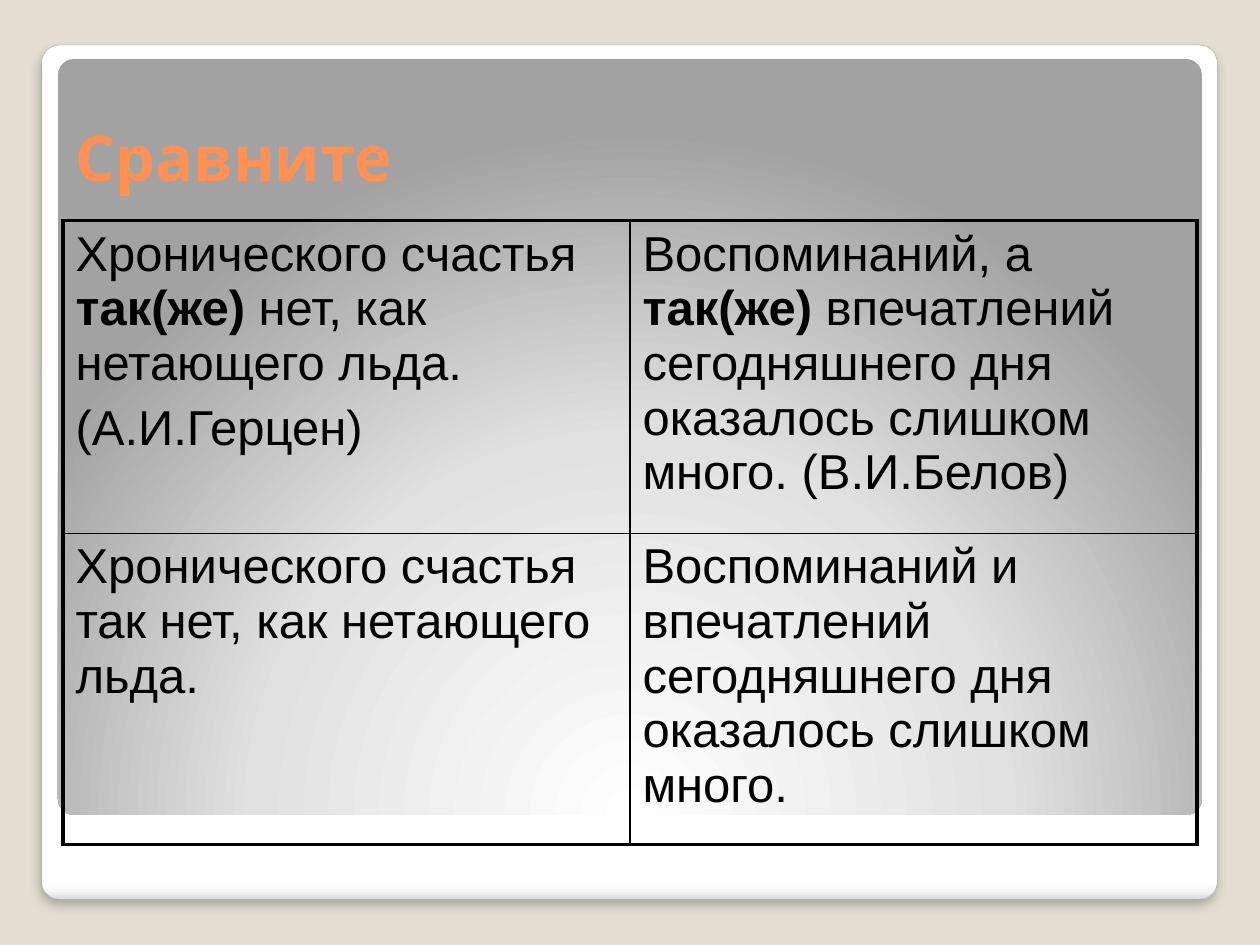
from lxml.etree import SubElement as Sub
from pptx import Presentation
from pptx.dml.color import RGBColor as RGB
from pptx.enum.shapes import MSO_SHAPE as Shape
from pptx.enum.text import MSO_ANCHOR as Anchor, PP_ALIGN as Align
from pptx.oxml.ns import qn
from pptx.util import Cm, Pt

HUES = {"back": "E3DED1", "edge": "A4A4A4", "title": "FF9155", "ink": "000000"}
CARD = [(0, "FFFFFF"), (98, "FFFFFF"), (99, "F7F7F7"), (100, "DADADA")]
GLOW = [(0, "FFFFFF"), (55, "E1E1E1"), (100, "A2A2A2")]


def panel(left, top, width, height, stops):
    """Add a rounded panel and return it with its emptied gradient element."""
    shape = slide.shapes.add_shape(Shape.ROUNDED_RECTANGLE, Cm(left), Cm(top), Cm(width), Cm(height))
    shape.adjustments[0] = 0.021
    shape.shadow.inherit = False
    shape.fill.gradient()
    grad = shape._element.spPr.find(qn("a:gradFill"))
    for part in list(grad):
        grad.remove(part)
    row = Sub(grad, qn("a:gsLst"))
    for pos, hue in stops:
        stop = Sub(row, qn("a:gs"), pos=str(pos * 1000))
        Sub(stop, qn("a:srgbClr"), val=hue)
    return shape, grad


def border(cell, side, width):
    line = Sub(cell._tc.get_or_add_tcPr(), qn("a:ln" + side), w=str(Pt(width)))
    Sub(Sub(line, qn("a:solidFill")), qn("a:srgbClr"), val=HUES["ink"])


deck = Presentation()
deck.slide_width, deck.slide_height = Cm(25.4), Cm(19.05)
slide = deck.slides.add_slide(deck.slide_layouts[5])
slide.background.fill.solid()
slide.background.fill.fore_color.rgb = RGB.from_string(HUES["back"])

# White card with a soft shadow
card, grad = panel(0.84, 0.91, 23.7, 17.22, CARD)
Sub(grad, qn("a:lin"), ang="5400000", scaled="0")
card.line.color.rgb = RGB.from_string(HUES["edge"])
card.line.width = Pt(0.16)
glow = Sub(card._element.spPr.find(qn("a:effectLst")), qn("a:outerShdw"),
           blurRad=str(Pt(6)), dist=str(Pt(4)), dir="5400000", rotWithShape="0")
Sub(Sub(glow, qn("a:srgbClr"), val=HUES["ink"]), qn("a:alpha"), val="25000")

# Grey panel lit from below
lit, grad = panel(1.17, 1.19, 23.06, 15.24, GLOW)
ring = Sub(grad, qn("a:path"), path="circle")
Sub(ring, qn("a:fillToRect"), l="50000", t="175000", r="50000", b="-75000")
lit.line.fill.background()

# Title, brought in front of the panels
title = slide.shapes.title
slide.shapes._spTree.append(title._element)
title.left, title.top, title.width, title.height = Cm(1.27), Cm(1.9), Cm(22.86), Cm(2.5)
title.text_frame.text = "Сравните"
title.text_frame.vertical_anchor = Anchor.MIDDLE
head = title.text_frame.paragraphs[0]
head.alignment = Align.LEFT
font = head.runs[0].font
font.name, font.size, font.bold = "Verdana", Pt(36), True
font.color.rgb = RGB.from_string(HUES["title"])

# Table: one string per paragraph, bold parts between asterisks
TEXTS = [
    [["Хронического счастья *так(же)* нет, как нетающего льда.", "(А.И.Герцен)"],
     ["Воспоминаний, а *так(же)* впечатлений сегодняшнего дня оказалось слишком много. (В.И.Белов)"]],
    [["Хронического счастья так нет, как нетающего льда."],
     ["Воспоминаний и впечатлений сегодняшнего дня оказалось слишком много."]],
]
table = slide.shapes.add_table(2, 2, Cm(1.27), Cm(4.45), Cm(22.86), Cm(12.57)).table
table.first_row = table.horz_banding = False
table.rows[0].height, table.rows[1].height = Cm(6.3), Cm(6.27)
for r, row in enumerate(TEXTS):
    for c, lines in enumerate(row):
        cell = table.cell(r, c)
        for side, outer in (("L", c == 0), ("R", c == 1), ("T", r == 0), ("B", r == 1)):
            border(cell, side, 2.25 if outer else 1)
        cell.fill.background()
        cell.text_frame.text = "\n".join("" for _ in lines)
        for para, line in zip(cell.text_frame.paragraphs, lines):
            para.space_before = Pt(5.6)
            for i, part in enumerate(line.split("*")):
                run = para.add_run()
                run.text = part
                run.font.name, run.font.size = "Arial", Pt(28)
                run.font.bold = i % 2 == 1
                run.font.color.rgb = RGB.from_string(HUES["ink"])

deck.save("out.pptx")
